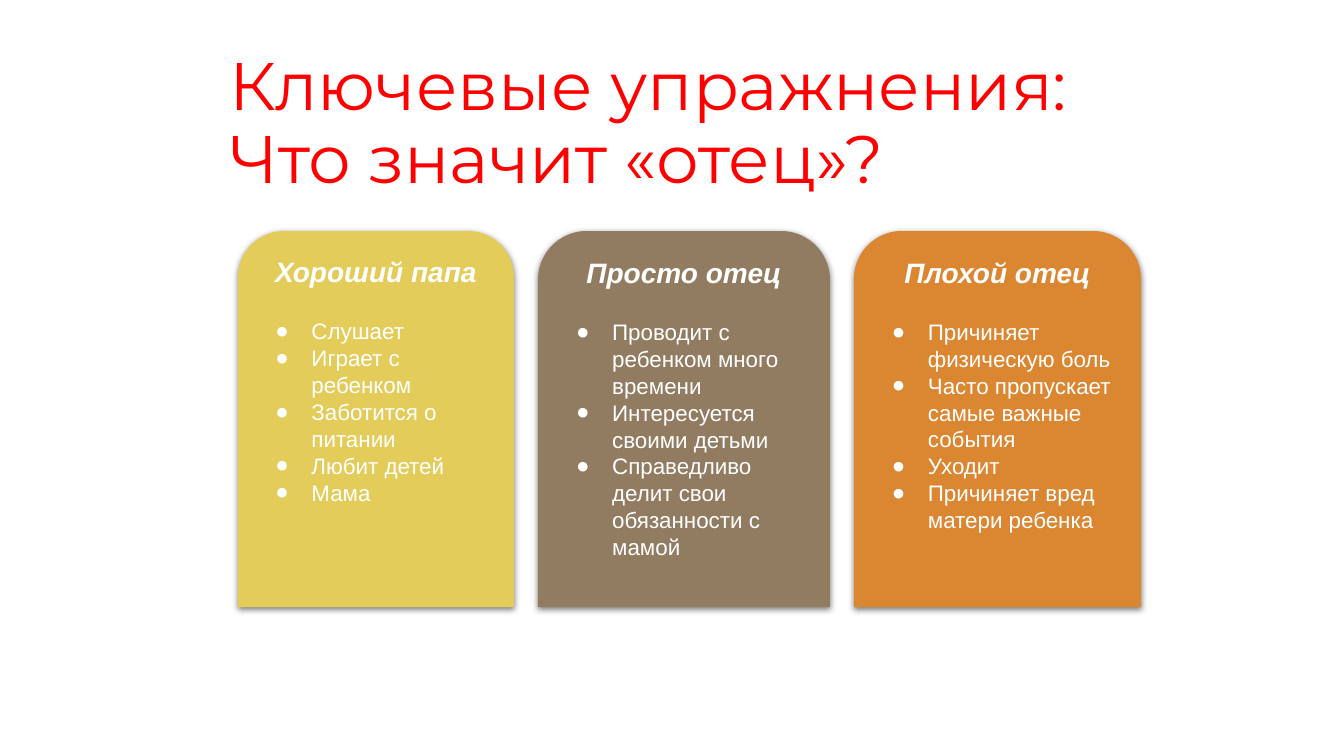
from collections import namedtuple
from dataclasses import dataclass

from lxml import etree
from pptx import Presentation
from pptx.dml.color import RGBColor
from pptx.enum.shapes import MSO_SHAPE
from pptx.enum.text import MSO_ANCHOR, MSO_AUTO_SIZE, PP_ALIGN
from pptx.oxml.ns import qn
from pptx.util import Emu, Pt

CARD_SHAPE = MSO_SHAPE.ROUND_2_SAME_RECTANGLE
LEFT, CENTER = PP_ALIGN.LEFT, PP_ALIGN.CENTER
TOP, MIDDLE = MSO_ANCHOR.TOP, MSO_ANCHOR.MIDDLE
NO_AUTOFIT = MSO_AUTO_SIZE.NONE
TITLE_ONLY = 5

Box = namedtuple("Box", "left top width height")


@dataclass(frozen=True)
class Theme:
    title_font: str = "Montserrat"
    body_font: str = "Arial"
    title_color: str = "FF0000"
    text_color: str = "FFFFFF"
    shadow_color: str = "000000"
    title_size: int = 48
    heading_size: int = 20
    item_size: int = 16
    list_gap: int = 21


THEME = Theme()
PAGE = Box(0, 0, 1344, 756)
TITLE_BOX = Box(219, 54, 997, 143)
CARDS_BOX = Box(238, 231, 903, 376)
CARD_GAP = 24
TITLE = "Ключевые упражнения: Что значит «отец»?"

# Heading, width, fill and list of each card
CARDS = [
    ("Хороший папа", 276, "E3CC5A",
     ["Слушает", "Играет с ребенком", "Заботится о питании",
      "Любит детей", "Мама"]),
    ("Просто отец", 292, "927C61",
     ["Проводит с ребенком много времени", "Интересуется своими детьми",
      "Справедливо делит свои обязанности с мамой"]),
    ("Плохой отец", 287, "DB8631",
     ["Причиняет физическую боль", "Часто пропускает самые важные события",
      "Уходит", "Причиняет вред матери ребенка"]),
]


def px(length):
    return Emu(round(length * 914400 / 100.8))


def format_runs(para, font, size, color, strong=False):
    for span in para.runs:
        span.font.name = font
        span.font.size = Pt(size)
        span.font.color.rgb = RGBColor.from_string(color)
        span.font.bold = span.font.italic = strong


def add_bullet(para):
    properties = para._p.get_or_add_pPr()
    properties.set("marL", str(px(50)))
    properties.set("indent", str(-px(36)))
    color = etree.SubElement(properties, qn("a:buClr"))
    etree.SubElement(color, qn("a:srgbClr"), val=THEME.text_color)
    etree.SubElement(properties, qn("a:buFont"), typeface=THEME.body_font)
    etree.SubElement(properties, qn("a:buChar"), char="●")


def add_soft_shadow(shape):
    shape.shadow.inherit = False
    effects = shape._element.spPr.find(qn("a:effectLst"))
    shadow = etree.SubElement(
        effects, qn("a:outerShdw"), blurRad=str(Pt(4.5)), dist=str(Pt(1.5)),
        dir="5400000", algn="bl", rotWithShape="0")
    color = etree.SubElement(shadow, qn("a:srgbClr"), val=THEME.shadow_color)
    etree.SubElement(color, qn("a:alpha"), val="50000")


def fill_title(page, box):
    title = page.shapes.title
    title.left, title.top, title.width, title.height = map(px, box)
    frame = title.text_frame
    frame.text = TITLE
    frame.word_wrap = True
    frame.auto_size = NO_AUTOFIT
    frame.vertical_anchor = MIDDLE
    para = frame.paragraphs[0]
    para.alignment = LEFT
    para.line_spacing = 0.9
    format_runs(para, THEME.title_font, THEME.title_size, THEME.title_color)


def add_card(page, box, heading, fill, items):
    card = page.shapes.add_shape(CARD_SHAPE, *map(px, box))
    card.adjustments[0] = 0.167
    card.fill.solid()
    card.fill.fore_color.rgb = RGBColor.from_string(fill)
    card.line.fill.background()
    add_soft_shadow(card)

    # Heading
    frame = card.text_frame
    frame.word_wrap = True
    frame.vertical_anchor = TOP
    frame.margin_left = frame.margin_right = px(10)
    frame.margin_top = frame.margin_bottom = px(10)
    frame.text = heading
    para = frame.paragraphs[0]
    para.alignment = CENTER
    format_runs(para, THEME.body_font, THEME.heading_size,
                THEME.text_color, strong=True)

    # List
    for index, item in enumerate(items):
        para = frame.add_paragraph()
        add_bullet(para)
        para.text = item
        para.alignment = LEFT
        para.space_before = Pt(0 if index else THEME.list_gap)
        format_runs(para, THEME.body_font, THEME.item_size, THEME.text_color)


def add_cards(page, box):
    left = box.left
    for heading, width, fill, items in CARDS:
        card_box = Box(left, box.top, width, box.height)
        add_card(page, card_box, heading, fill, items)
        left += width + CARD_GAP


def main():
    deck = Presentation()
    deck.slide_width, deck.slide_height = px(PAGE.width), px(PAGE.height)
    page = deck.slides.add_slide(deck.slide_layouts[TITLE_ONLY])
    fill_title(page, TITLE_BOX)
    add_cards(page, CARDS_BOX)
    deck.save("out.pptx")


if __name__ == "__main__":
    main()
